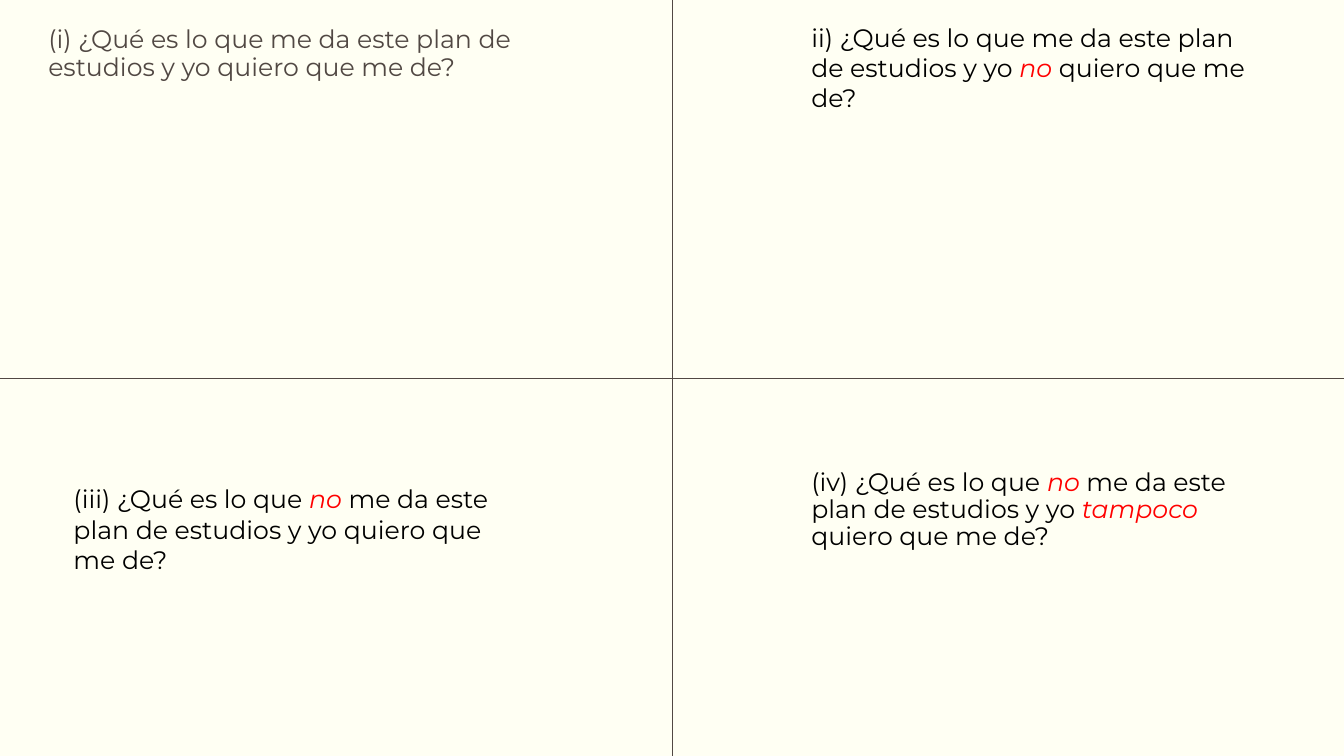
from pptx import Presentation
from pptx.dml.color import RGBColor
from pptx.enum.shapes import MSO_CONNECTOR
from pptx.enum.text import MSO_AUTO_SIZE
from pptx.oxml.ns import qn
from pptx.util import Pt
from lxml import etree

STRAIGHT = MSO_CONNECTOR.STRAIGHT
GROW = MSO_AUTO_SIZE.SHAPE_TO_FIT_TEXT
WIDTH, HEIGHT = 960, 540
COLORS = {"paper": "FFFFF3", "brown": "514843", "black": "000000", "red": "FF0000"}


def color(name):
    return RGBColor.from_string(COLORS[name])


class Page:
    font = "Montserrat"
    size = 18
    rule = 0.5

    def __init__(self, slide):
        self.slide = slide
        fill = slide.background.fill
        fill.solid()
        fill.fore_color.rgb = color("paper")

    def text(self, box, parts, ink="black", space=None):
        """Add a question; every second part is stressed in red italics."""
        frame = self.slide.shapes.add_textbox(*map(Pt, box)).text_frame
        frame.word_wrap = True
        frame.auto_size = GROW
        para = frame.paragraphs[0]
        if space:
            para.line_spacing = space
        for i, part in enumerate(parts):
            stress = i % 2 == 1
            run = para.add_run()
            run.text = part
            run.font.name = self.font
            run.font.size = Pt(self.size)
            run.font.italic = stress
            run.font.color.rgb = color("red" if stress else ink)

    def line(self, *ends):
        line = self.slide.shapes.add_connector(STRAIGHT, *map(Pt, ends))
        line.line.color.rgb = color("brown")
        line.line.width = Pt(self.rule)
        etree.SubElement(line._element.spPr, qn("a:effectLst"))


def main():
    deck = Presentation()
    deck.slide_width, deck.slide_height = Pt(WIDTH), Pt(HEIGHT)
    page = Page(deck.slides.add_slide(deck.slide_layouts[6]))

    page.text((27.4, 15.8, 360, 66),
              ["(i) ¿Qué es lo que me da este plan de estudios y yo quiero que me de?"],
              ink="brown", space=0.9)
    page.text((572.4, 12.2, 334.8, 72.7),
              ["ii) ¿Qué es lo que me da este plan de estudios y yo ", "no",
               " quiero que me de?"])
    page.text((45.4, 342, 339.8, 72.7),
              ["(iii) ¿Qué es lo que ", "no",
               " me da este plan de estudios y yo quiero que me de?"])
    page.text((572.4, 331.9, 331.9, 66),
              ["(iv) ¿Qué es lo que ", "no", " me da este plan de estudios y yo ",
               "tampoco ", "quiero que me de?"], space=0.9)

    page.line(WIDTH / 2, 0, WIDTH / 2, HEIGHT)
    page.line(0, HEIGHT / 2, WIDTH, HEIGHT / 2)
    deck.save("out.pptx")


if __name__ == "__main__":
    main()
